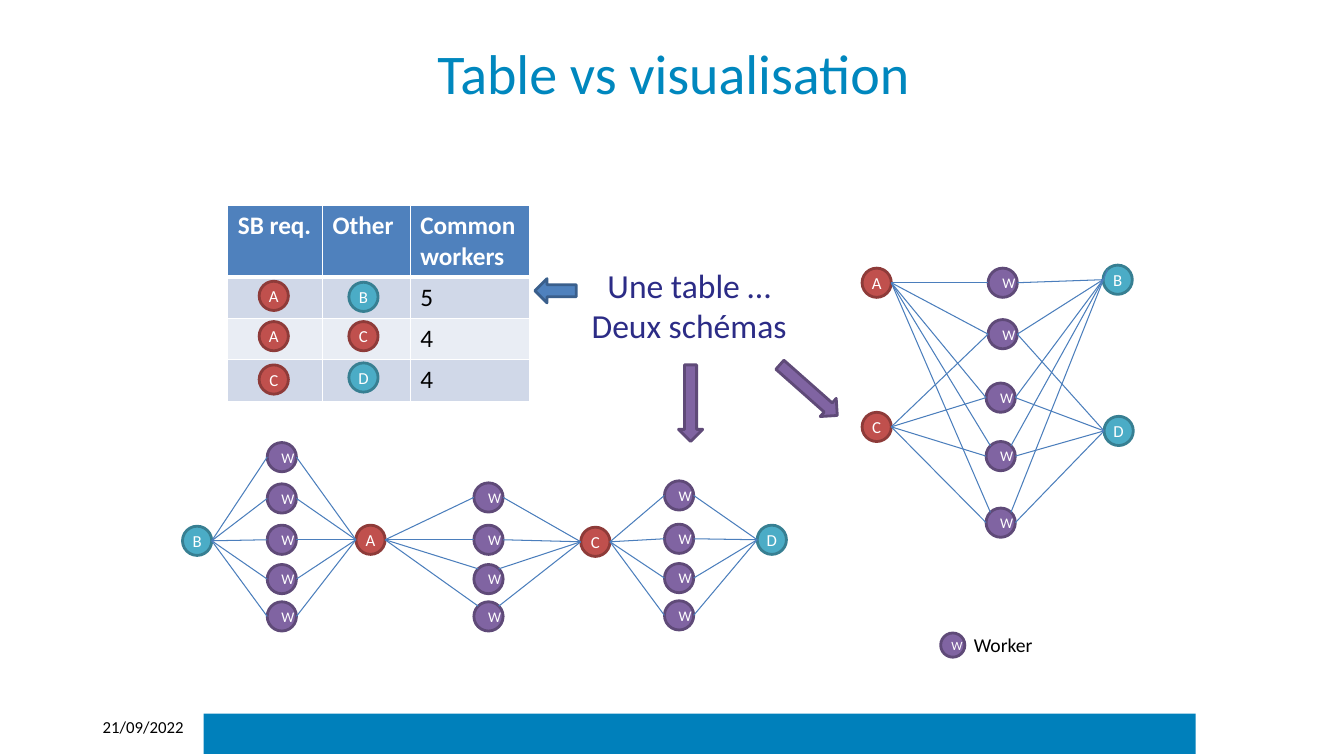
from lxml.etree import SubElement
from pptx import Presentation
from pptx.dml.color import RGBColor
from pptx.enum.shapes import MSO_CONNECTOR, MSO_SHAPE
from pptx.enum.text import MSO_ANCHOR, MSO_AUTO_SIZE, PP_ALIGN
from pptx.oxml.ns import qn
from pptx.util import Emu, Pt

FONT = "Calibri"
NODE = 29  # node diameter
C = {
    "title": "0087BE", "bar": "0080BB", "caption": "2C2C86", "link": "4B7EBC",
    "white": "FFFFFF", "black": "000000",
    "red": "C0504D", "red_line": "8E3B39",
    "teal": "4BACC6", "teal_line": "377F92",
    "purple": "8064A2", "purple_line": "5F4A78",
    "blue": "4F81BD", "blue_line": "3A5F8C",
    "band_dark": "D0D8E8", "band_light": "E9EDF4",
}
# Kind of node: colour, text size, horizontal and vertical insets
KIND = {
    "A": ("red", 12, 4, 5), "C": ("red", 12, 4, 5),
    "B": ("teal", 12, 0, 0), "D": ("teal", 12, 0, 0),
    "W": ("purple", 10.5, 10, 5),
}
# Points on a node, as a share of the diameter
SITE = {"left": (0, 0.5), "right": (1, 0.5), "top_left": (0.15, 0.15), "top_right": (0.85, 0.15)}


def px(n):
    """100 px to the inch."""
    return Emu(round(n * 9144))


def rgb(name):
    return RGBColor.from_string(C[name])


def write(tf, text, size=18, color="black", bold=False, align=PP_ALIGN.LEFT):
    for i, line in enumerate(text.split("\n")):
        p = tf.paragraphs[0] if i == 0 else tf.add_paragraph()
        p.alignment = align
        r = p.add_run()
        r.text = line
        r.font.name, r.font.size, r.font.bold = FONT, Pt(size), bold
        r.font.color.rgb = rgb(color)


def add_text(slide, box, text, wrap=False, **fmt):
    tf = slide.shapes.add_textbox(*map(px, box)).text_frame
    tf.word_wrap = wrap
    tf.auto_size = MSO_AUTO_SIZE.NONE if wrap else MSO_AUTO_SIZE.SHAPE_TO_FIT_TEXT
    write(tf, text, **fmt)


def add_shape(slide, preset, box, fill, line=None, rotation=0):
    sp = slide.shapes.add_shape(preset, *map(px, box))
    sp.shadow.inherit = False
    sp.rotation = rotation
    sp.fill.solid()
    sp.fill.fore_color.rgb = rgb(fill)
    if line:
        sp.line.color.rgb = rgb(line)
        sp.line.width = Pt(2)
    else:
        sp.line.fill.background()
    return sp


def add_node(slide, label, x, y, diameter=NODE, size=None):
    color, default_size, dx, dy = KIND[label]
    sp = add_shape(slide, MSO_SHAPE.OVAL, (x, y, diameter, diameter), color, color + "_line")
    tf = sp.text_frame
    tf.word_wrap = True
    tf.vertical_anchor = MSO_ANCHOR.MIDDLE
    tf.margin_left = tf.margin_right = px(dx)
    tf.margin_top = tf.margin_bottom = px(dy)
    write(tf, label, size=size or default_size, color="white", align=PP_ALIGN.CENTER)
    return sp


def add_link(slide, start, end, start_site="right", end_site="left"):
    ends = []
    for sp, site in ((start, start_site), (end, end_site)):
        fx, fy = SITE[site]
        ends += [round(sp.left + fx * sp.width), round(sp.top + fy * sp.height)]
    line = slide.shapes.add_connector(MSO_CONNECTOR.STRAIGHT, *map(Emu, ends))
    line.line.color.rgb = rgb("link")
    line.line.width = Pt(0.75)
    SubElement(line._element.spPr, qn("a:effectLst"))


def add_title(slide, box):
    title = slide.shapes.title
    title.left, title.top, title.width, title.height = map(px, box)
    title.text_frame.vertical_anchor = MSO_ANCHOR.MIDDLE
    write(title.text_frame, "Table vs visualisation", size=40, color="title", align=PP_ALIGN.CENTER)


def style_cell(cell, fill, header):
    tc_pr = cell._tc.get_or_add_tcPr()
    for side in ("lnL", "lnR", "lnT", "lnB"):
        width = 3 if header and side == "lnB" else 1
        ln = SubElement(tc_pr, qn("a:" + side), w=str(Pt(width)))
        SubElement(SubElement(ln, qn("a:solidFill")), qn("a:srgbClr"), val=C["white"])
    cell.fill.solid()
    cell.fill.fore_color.rgb = rgb(fill)


def add_common_workers_table(slide, box):
    x, y, w, h = box
    rows = [("SB req.", "Other", "Common workers"), ("", "", "5"), ("", "", "4"), ("", "", "4")]
    fills = ("blue", "band_dark", "band_light", "band_dark")
    table = slide.shapes.add_table(4, 3, *map(px, box)).table
    for col, width in zip(table.columns, (94, 87, w - 181)):
        col.width = px(width)
    for i, (row, fill) in enumerate(zip(rows, fills)):
        header = i == 0
        table.rows[i].height = px(h - 3 * 41 if header else 41)
        for j, text in enumerate(row):
            cell = table.cell(i, j)
            style_cell(cell, fill, header)
            if text:
                write(cell.text_frame, text, color="white" if header else "black", bold=header)
    # Nodes lying on the cells
    for label, dx, dy in (("A", 31, 75), ("A", 31, 115), ("C", 31, 158),
                          ("C", 120, 115), ("B", 120, 76), ("D", 120, 156)):
        add_node(slide, label, x + dx, y + dy)


def add_chain(slide, box):
    """Hubs in a row, with the shared workers stacked between neighbours."""
    x, y, _, _ = box
    hubs = [add_node(slide, label, x + dx, y + dy)
            for label, dx, dy in (("B", 0, 83), ("A", 172, 82), ("C", 395, 84), ("D", 570, 82))]
    stacks = [(84, (0, 41, 82, 121, 158)), (289, (40, 82, 121, 158)), (478, (38, 81, 120, 157))]
    for k, (dx, tops) in enumerate(stacks):
        for i, dy in enumerate(tops):
            worker = add_node(slide, "W", x + dx, y + dy)
            corner = "top_" if k == 1 and i >= 2 else ""
            add_link(slide, hubs[k], worker, end_site=corner + "left")
            add_link(slide, worker, hubs[k + 1], start_site=corner + "right")


def add_network(slide, box):
    """Requests on the left, others on the right, workers in one column."""
    x, y, _, _ = box
    hub = {label: add_node(slide, label, x + dx, y + dy)
           for label, dx, dy in (("A", 0, 3), ("C", 0, 146), ("B", 239, 0), ("D", 240, 150))}
    spots = ((125, 3), (125, 54), (123, 117), (123, 175), (123, 241))
    for i, (dx, dy) in enumerate(spots):
        worker = add_node(slide, "W", x + dx, y + dy)
        corner = "top_" if i >= 3 else ""
        add_link(slide, hub["A"], worker, end_site=corner + "left")
        add_link(slide, worker, hub["B"], corner + "right", "top_left" if i == 4 else "left")
        if i > 0:
            add_link(slide, hub["C"], worker)
            add_link(slide, worker, hub["D"])


def add_caption(slide, box):
    x, y, w, h = box
    add_text(slide, box, "Une table …\nDeux schémas", size=24, color="caption", align=PP_ALIGN.CENTER)
    # Arrows to the table, the chain and the network
    for dx, dy, length, rotation, color in ((-37, 10, 41, 90, "blue"), (97, 104, 76, 0, "purple"),
                                            (214, 91, 76, 311.5, "purple")):
        add_shape(slide, MSO_SHAPE.DOWN_ARROW, (x + dx, y + dy, 24, length),
                  color, color + "_line", rotation)


def add_legend(slide, box):
    x, y, w, h = box
    add_node(slide, "W", x, y + 5, diameter=24, size=9)
    add_text(slide, (x + 23, y, w - 23, h), "Worker", size=14)


def add_footer(slide, box):
    x, y, w, h = box
    add_shape(slide, MSO_SHAPE.RECTANGLE, (x + 110, y + 2, w - 110, h), "bar")
    add_text(slide, (x, y, 126, h), "21/09/2022", wrap=True, size=12)


def main():
    prs = Presentation()
    prs.slide_width, prs.slide_height = px(1333), px(750)
    slide = prs.slides.add_slide(prs.slide_layouts[5])
    add_title(slide, (68, 21, 1200, 101))
    add_chain(slide, (181, 439, 599, 187))
    add_network(slide, (855, 263, 269, 270))
    add_common_workers_table(slide, (226, 204, 299, 192))
    add_legend(slide, (933, 623, 102, 34))
    add_caption(slide, (576, 258, 215, 91))
    add_footer(slide, (92, 706, 1094, 40))
    prs.save("out.pptx")


if __name__ == "__main__":
    main()
